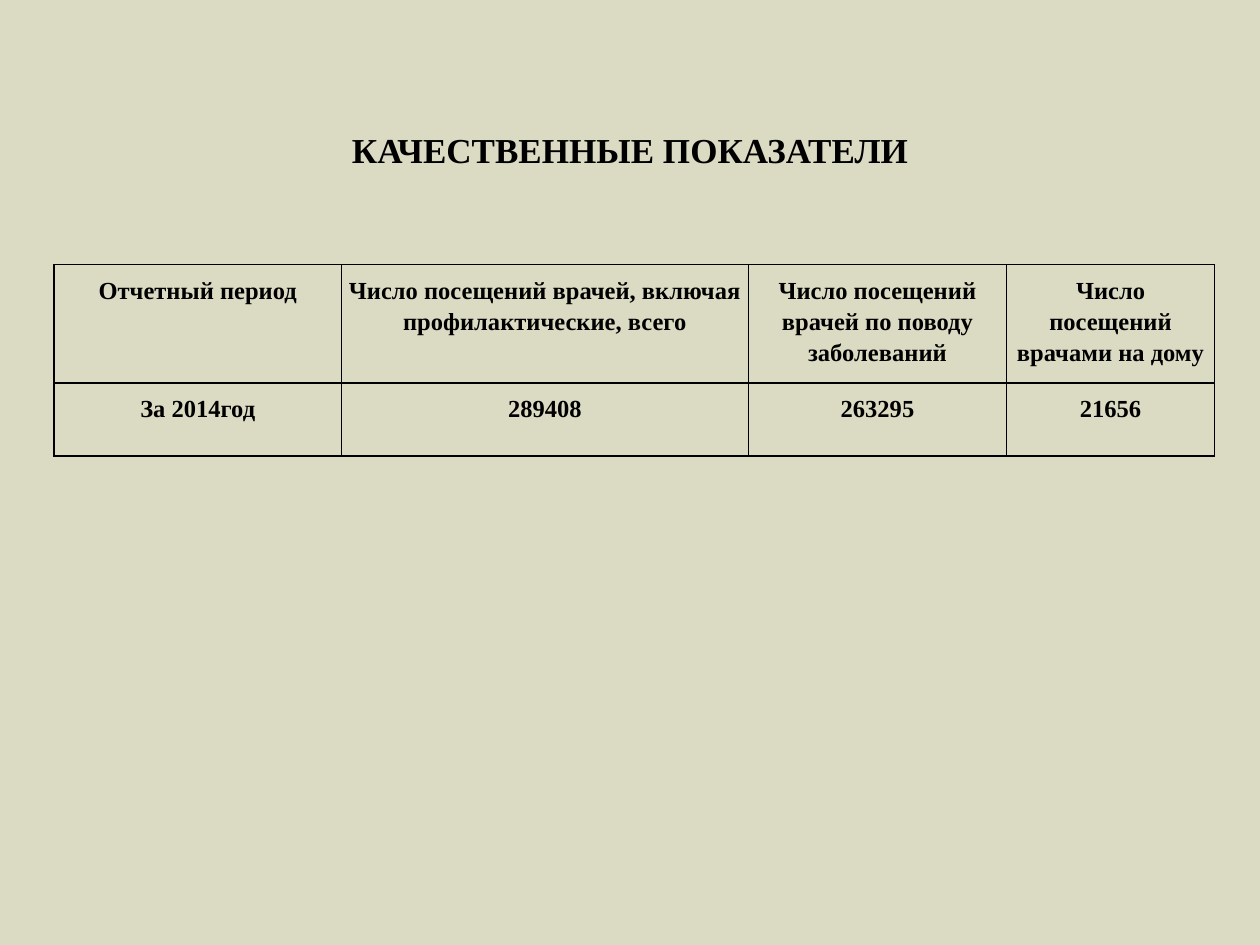
from lxml import etree
from pptx import Presentation, util as u
from pptx.dml.color import RGBColor
from pptx.enum import text
from pptx.oxml.ns import qn

BACKGROUND = RGBColor(0xDB, 0xDA, 0xC2)
BLACK = RGBColor(0, 0, 0)
FONT = "Times New Roman"
WIDTH, HEIGHT = u.Inches(10), u.Inches(7.5)
COLUMNS = [2.28, 3.23, 2.05, 1.65]
ROWS = [0.94, 0.58]
VISITS = [
    [
        "Отчетный период",
        "Число посещений врачей, включая профилактические, всего",
        "Число посещений врачей по поводу заболеваний",
        "Число посещений врачами на дому",
    ],
    ["За 2014год", "289408", "263295", "21656"],
]


def format_paragraph(p, size):
    p.alignment = text.PP_ALIGN.CENTER
    p.font.name = FONT
    p.font.size = u.Pt(size)
    p.font.bold = True
    p.font.color.rgb = BLACK


def set_title(s, wording):
    title = s.shapes.title
    title.left, title.top = u.Inches(0.5), u.Inches(0.91)
    title.width, title.height = int(WIDTH * 0.9), u.Inches(0.55)
    tf = title.text_frame
    tf.text = wording
    tf.vertical_anchor = text.MSO_ANCHOR.MIDDLE
    format_paragraph(tf.paragraphs[0], 20)


def add_borders(cell):
    properties = cell._tc.get_or_add_tcPr()
    for position, side in enumerate(("lnL", "lnR", "lnT", "lnB")):
        line = etree.Element(qn(f"a:{side}"), w=str(u.Pt(1)))
        fill = etree.SubElement(line, qn("a:solidFill"))
        etree.SubElement(fill, qn("a:srgbClr"), val=str(BLACK))
        properties.insert(position, line)


def format_cell(cell, wording):
    cell.text = wording
    cell.fill.background()
    cell.margin_left = cell.margin_right = u.Inches(0.04)
    cell.margin_top = cell.margin_bottom = u.Inches(0.07)
    p = cell.text_frame.paragraphs[0]
    p.line_spacing = 1.15
    format_paragraph(p, 14)
    add_borders(cell)


def add_visits_table(s):
    table = s.shapes.add_table(
        len(ROWS), len(COLUMNS), u.Inches(0.43), u.Inches(2.1),
        u.Inches(sum(COLUMNS)), u.Inches(sum(ROWS)),
    ).table
    table.first_row = table.horz_banding = False
    for column, width in zip(table.columns, COLUMNS):
        column.width = u.Inches(width)
    for row, height, wordings in zip(table.rows, ROWS, VISITS):
        row.height = u.Inches(height)
        for cell, wording in zip(row.cells, wordings):
            format_cell(cell, wording)


def main():
    prs = Presentation()
    prs.slide_width, prs.slide_height = WIDTH, HEIGHT
    s = prs.slides.add_slide(prs.slide_layouts[5])
    s.background.fill.solid()
    s.background.fill.fore_color.rgb = BACKGROUND
    set_title(s, "КАЧЕСТВЕННЫЕ ПОКАЗАТЕЛИ")
    add_visits_table(s)
    prs.save("out.pptx")


if __name__ == "__main__":
    main()
